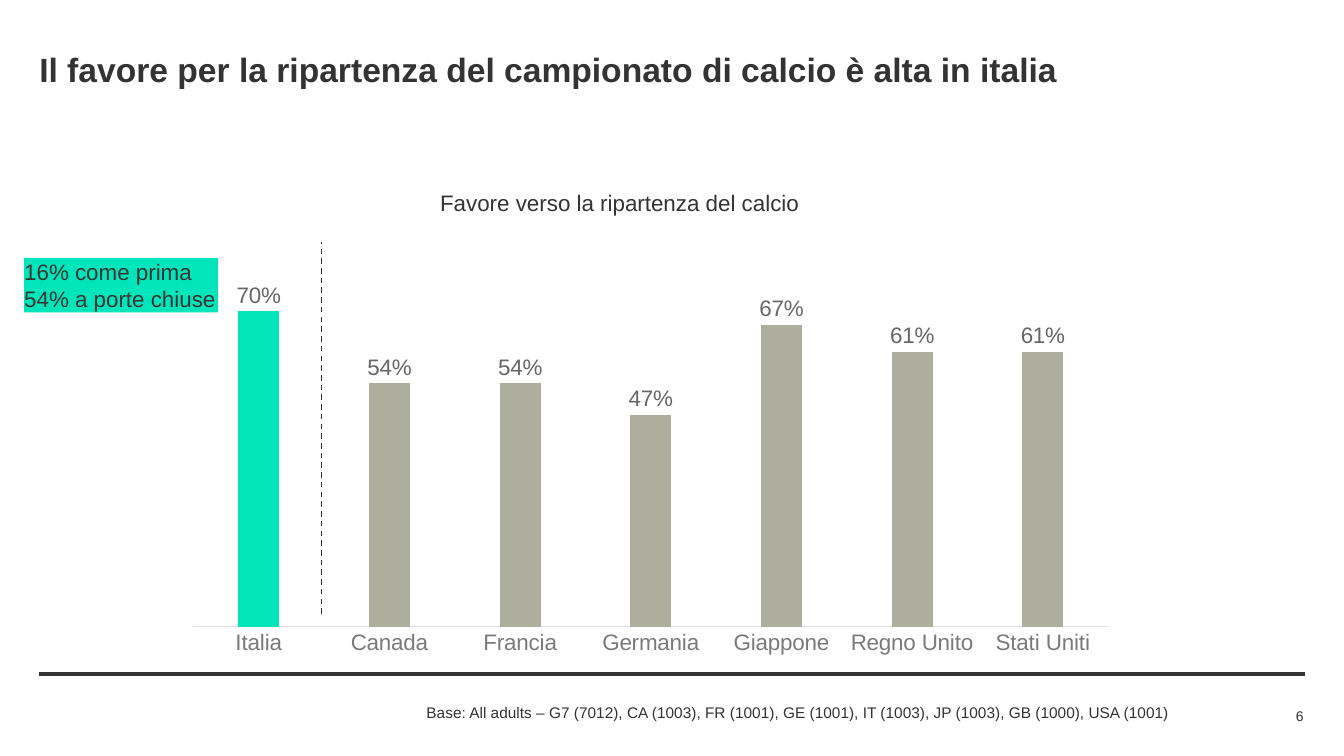
from lxml import etree
from pptx import Presentation
from pptx.chart.data import CategoryChartData
from pptx.dml.color import RGBColor
from pptx.enum import chart as ch, dml, shapes, text
from pptx.oxml.ns import qn
from pptx.util import Inches, Pt

DARK = RGBColor(0x33, 0x33, 0x33)
GREEN = RGBColor(0x00, 0xE5, 0xBA)
STONE = RGBColor(0xAE, 0xAE, 0x9F)
LABEL = RGBColor(0x66, 0x66, 0x66)
NAMES = RGBColor(0x7A, 0x7A, 0x7A)
PALE = RGBColor(0xE0, 0xE0, 0xE0)

LEFT, CENTER, RIGHT = (text.PP_ALIGN.LEFT, text.PP_ALIGN.CENTER,
                       text.PP_ALIGN.RIGHT)
TOP, MIDDLE = text.MSO_ANCHOR.TOP, text.MSO_ANCHOR.MIDDLE

FAVOR = {"Italia": 0.70, "Canada": 0.54, "Francia": 0.54, "Germania": 0.47,
         "Giappone": 0.67, "Regno Unito": 0.61, "Stati Uniti": 0.61}


class Page:
    """Draws on one slide in one style."""

    def __init__(self, slide, face="Arial"):
        self.items = slide.shapes
        self.face = face

    def style(self, font, size, color, bold=False):
        font.name, font.size, font.bold = self.face, Pt(size), bold
        font.color.rgb = color

    def letter(self, shape, words, size, align=LEFT, anchor=TOP,
               bold=False, wrap=True):
        """Put formatted words into a shape without insets."""
        frame = shape.text_frame
        frame.margin_left = frame.margin_right = 0
        frame.margin_top = frame.margin_bottom = 0
        frame.word_wrap = wrap
        frame.vertical_anchor = anchor
        frame.text = words
        for para in frame.paragraphs:
            para.alignment = align
            for run in para.runs:
                self.style(run.font, size, DARK, bold)

    def label(self, box, words, size, **look):
        shape = self.items.add_textbox(*map(Inches, box))
        self.letter(shape, words, size, **look)

    def badge(self, box, words, size, fill):
        shape = self.items.add_shape(shapes.MSO_SHAPE.RECTANGLE,
                                     *map(Inches, box))
        shape.shadow.inherit = False
        shape.fill.solid()
        shape.fill.fore_color.rgb = fill
        shape.line.fill.background()
        self.letter(shape, words, size, wrap=False)

    def rule(self, start, end, width, dash=None):
        line = self.items.add_connector(shapes.MSO_CONNECTOR.STRAIGHT,
                                        *map(Inches, start + end))
        line.line.color.rgb = DARK
        line.line.width = Pt(width)
        line.line.dash_style = dash
        etree.SubElement(line._element.spPr, qn("a:effectLst"))

    def bars(self, box, values, size):
        """Column chart with the first column highlighted."""
        data = CategoryChartData(number_format="0%")
        data.categories = list(values)
        data.add_series("Series 1", list(values.values()))
        chart = self.items.add_chart(ch.XL_CHART_TYPE.COLUMN_CLUSTERED,
                                     *map(Inches, box), data).chart
        chart.has_legend = chart.has_title = False
        self.style(chart.font, size, DARK)

        names = chart.category_axis
        names.major_tick_mark = ch.XL_TICK_MARK.NONE
        names.format.line.color.rgb = PALE
        names.format.line.width = Pt(0.75)
        self.style(names.tick_labels.font, size, NAMES)

        scale = chart.value_axis
        scale.minimum_scale, scale.maximum_scale = 0, 0.8
        scale.has_major_gridlines = False
        scale.visible = False

        plot = chart.plots[0]
        plot.gap_width, plot.overlap = 219, -27
        plot.vary_by_categories = False
        series = plot.series[0]
        series.invert_if_negative = False
        for part, color in ((series, STONE), (series.points[0], GREEN)):
            part.format.fill.solid()
            part.format.fill.fore_color.rgb = color

        marks = series.data_labels
        marks.show_value = True
        marks.number_format = "0%"
        marks.number_format_is_linked = False
        marks.position = ch.XL_LABEL_POSITION.OUTSIDE_END
        self.style(marks.font, size, LABEL)


def main():
    deck = Presentation()
    deck.slide_width, deck.slide_height = Inches(13.33), Inches(7.5)
    page = Page(deck.slides.add_slide(deck.slide_layouts[6]))

    page.rule((0.39, 6.69), (12.94, 6.69), 3)
    page.label((4.23, 6.98, 7.47, 0.19),
               "Base: All adults – G7 (7012), CA (1003), FR (1001), "
               "GE (1001), IT (1003), JP (1003), GB (1000), USA (1001)",
               11, wrap=False)
    page.label((0.39, 0.47, 12.54, 0.44),
               "Il favore per la ripartenza del campionato di calcio "
               "è alta in italia", 24, anchor=MIDDLE, bold=True)
    page.label((2.04, 1.88, 8.21, 0.27),
               "Favore verso la ripartenza del calcio", 16, align=CENTER)
    page.bars((1.73, 2.56, 9.45, 4.02), FAVOR, 16)
    page.badge((0.24, 2.56, 1.92, 0.54),
               "16% come prima\n54% a porte chiuse", 16, GREEN)
    page.rule((3.19, 6.09), (3.19, 2.4), 1, dml.MSO_LINE.DASH)
    page.label((11.87, 6.99, 1.06, 0.22), "6", 10, align=RIGHT,
               anchor=MIDDLE)
    deck.save("out.pptx")


if __name__ == "__main__":
    main()
